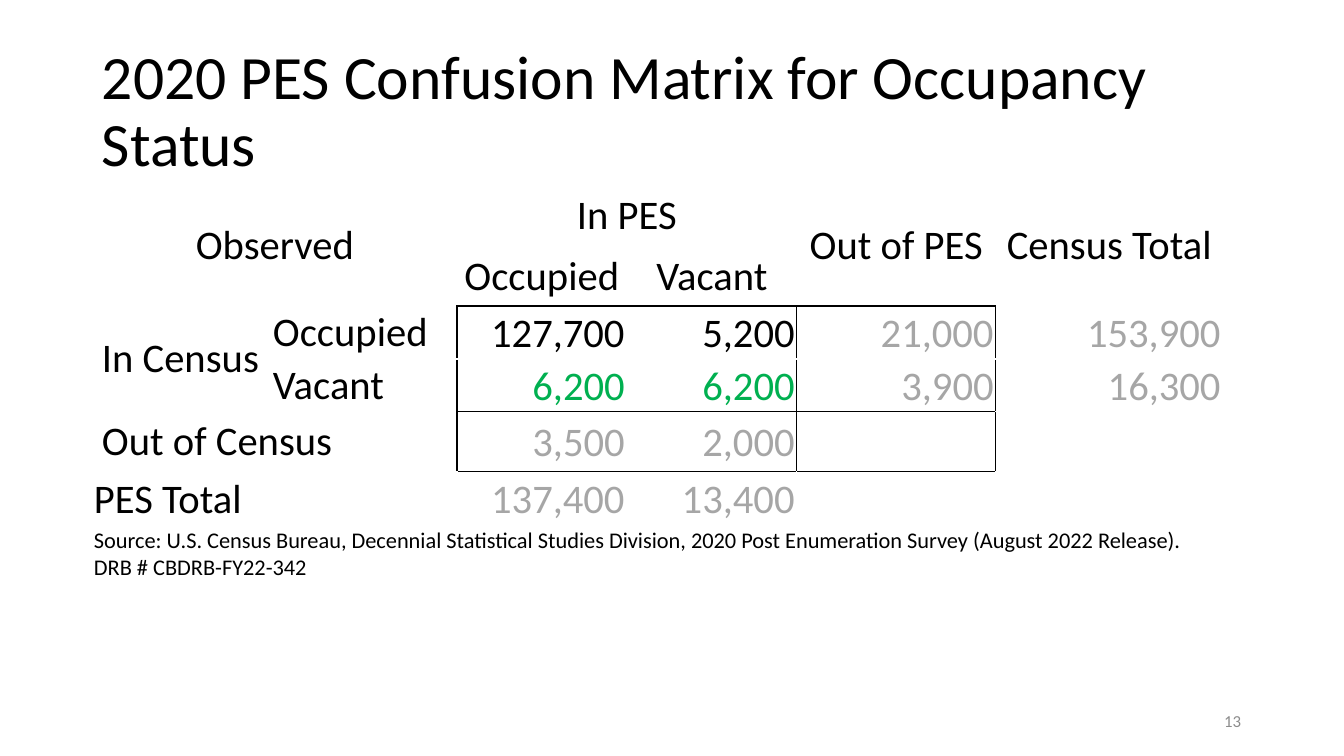
from dataclasses import dataclass
import pptx
import pptx.util
import pptx.dml.color
import pptx.enum.text
import pptx.oxml
import pptx.oxml.ns

RGBColor = pptx.dml.color.RGBColor
PP_ALIGN = pptx.enum.text.PP_ALIGN
MIDDLE = pptx.enum.text.MSO_ANCHOR.MIDDLE

BLACK = RGBColor(0x00, 0x00, 0x00)
WHITE = RGBColor(0xFF, 0xFF, 0xFF)
GREEN = RGBColor(0x00, 0xB0, 0x50)
GREY = RGBColor(0xA6, 0xA6, 0xA6)
NUMBER_GREY = RGBColor(0x8C, 0x8C, 0x8C)

EMU_PER_PX = 914400 / 100.8
COL_WIDTHS = (179, 28, 157, 170, 170, 199, 227)
ROW_HEIGHTS = (60, 60, 53, 53, 60, 54, 55)
WIDE = (9, 5, 9, 5)
TIGHT = (2, 2, 2, 0)
FLUSH = (1, 1, 1, 0)

RULED_ROWS = range(2, 5)
RULED_COLS = range(3, 6)
HORIZONTAL_RULES = (2, 4, 5)
VERTICAL_RULES = (3, 5, 6)


@dataclass(frozen=True)
class Entry:
    row: int
    col: int
    text: str
    rows: int = 1
    cols: int = 1
    inset: tuple[int, int, int, int] = WIDE
    align: PP_ALIGN = PP_ALIGN.LEFT
    size: int = 29


@dataclass(frozen=True)
class Count:
    row: int
    col: int
    text: str
    color: RGBColor = GREY


ENTRIES = (
    Entry(0, 0, "Observed", 2, 3, align=PP_ALIGN.CENTER),
    Entry(0, 3, "In PES", 1, 2, align=PP_ALIGN.CENTER),
    Entry(0, 5, "Out of PES", 2, align=PP_ALIGN.CENTER),
    Entry(0, 6, "Census Total", 2, align=PP_ALIGN.CENTER),
    Entry(1, 3, "Occupied", inset=TIGHT, align=PP_ALIGN.CENTER),
    Entry(1, 4, "Vacant", inset=TIGHT, align=PP_ALIGN.CENTER),
    Entry(2, 0, "In Census", 2),
    Entry(2, 1, "Occupied", 1, 2, FLUSH),
    Entry(3, 1, "Vacant", 1, 2, FLUSH),
    Entry(4, 0, "Out of Census", 1, 3),
    Entry(5, 0, "PES Total", 1, 2, FLUSH),
    Entry(6, 0, "Source: U.S. Census Bureau, Decennial Statistical Studies Division, "
          "2020 Post Enumeration Survey (August 2022 Release).  DRB # CBDRB-FY22-342",
          1, 7, FLUSH, size=16),
)

COUNTS = (
    Count(2, 3, "127,700", BLACK),
    Count(2, 4, "5,200", BLACK),
    Count(2, 5, "21,000"),
    Count(2, 6, "153,900"),
    Count(3, 3, "6,200", GREEN),
    Count(3, 4, "6,200", GREEN),
    Count(3, 5, "3,900"),
    Count(3, 6, "16,300"),
    Count(4, 3, "3,500"),
    Count(4, 4, "2,000"),
    Count(5, 3, "137,400"),
    Count(5, 4, "13,400"),
)


def px(n: int) -> pptx.util.Emu:
    return pptx.util.Emu(round(n * EMU_PER_PX))


def write(tf, text: str, *, size: int, color: RGBColor = BLACK,
          align: PP_ALIGN = PP_ALIGN.LEFT, spacing: float = 1.0) -> None:
    p = tf.paragraphs[0]
    p.alignment = align
    p.line_spacing = spacing
    r = p.add_run()
    r.text = text
    r.font.name = "Calibri"
    r.font.size = pptx.util.Pt(size)
    r.font.color.rgb = color


def add_text(s, box: tuple[int, int, int, int], text: str, **fmt) -> None:
    tf = s.shapes.add_textbox(*map(px, box)).text_frame
    tf.word_wrap = True
    tf.vertical_anchor = MIDDLE
    write(tf, text, **fmt)


def fill_cell(cell, text: str, inset: tuple[int, int, int, int], **fmt) -> None:
    cell.margin_left, cell.margin_top, cell.margin_right, cell.margin_bottom = map(px, inset)
    cell.vertical_anchor = MIDDLE
    write(cell.text_frame, text, **fmt)


def draw_borders(cell, row: int, col: int) -> None:
    bottom, right = row + cell.span_height, col + cell.span_width
    in_rows, in_cols = row in RULED_ROWS, right - 1 in RULED_COLS
    edges = (
        ("L", in_rows and col in VERTICAL_RULES),
        ("R", in_rows and right in VERTICAL_RULES),
        ("T", in_cols and row in HORIZONTAL_RULES),
        ("B", in_cols and bottom in HORIZONTAL_RULES),
    )
    tcPr = cell._tc.get_or_add_tcPr()
    for i, (side, ruled) in enumerate(edges):
        ln = pptx.oxml.parse_xml(
            f'<a:ln{side} {pptx.oxml.ns.nsdecls("a")} w="12700"><a:solidFill>'
            f'<a:srgbClr val="{BLACK if ruled else WHITE}"/></a:solidFill></a:ln{side}>')
        tcPr.insert(i, ln)


def add_matrix(s) -> None:
    frame = s.shapes.add_table(len(ROW_HEIGHTS), len(COL_WIDTHS), px(93), px(186),
                               px(sum(COL_WIDTHS)), px(sum(ROW_HEIGHTS)))
    table = frame.table
    table.first_row = False
    table.horz_banding = False
    for column, width in zip(table.columns, COL_WIDTHS):
        column.width = px(width)
    for row, height in zip(table.rows, ROW_HEIGHTS):
        row.height = px(height)
    for e in ENTRIES:
        cell = table.cell(e.row, e.col)
        if e.rows * e.cols > 1:
            cell.merge(table.cell(e.row + e.rows - 1, e.col + e.cols - 1))
        fill_cell(cell, e.text, e.inset, size=e.size, align=e.align)
    for c in COUNTS:
        fill_cell(table.cell(c.row, c.col), c.text, TIGHT, size=29,
                  color=c.color, align=PP_ALIGN.RIGHT)
    for row in range(len(ROW_HEIGHTS)):
        for col in range(len(COL_WIDTHS)):
            cell = table.cell(row, col)
            cell.fill.background()
            draw_borders(cell, row, col)


def main() -> None:
    prs = pptx.Presentation()
    prs.slide_width, prs.slide_height = px(1344), px(756)
    s = prs.slides.add_slide(prs.slide_layouts[6])
    add_text(s, (92, 40, 1159, 146), "2020 PES Confusion Matrix for Occupancy Status",
             size=44, spacing=0.9)
    add_text(s, (949, 701, 302, 40), "13", size=12, color=NUMBER_GREY, align=PP_ALIGN.RIGHT)
    add_matrix(s)
    prs.save("out.pptx")


if __name__ == "__main__":
    main()
